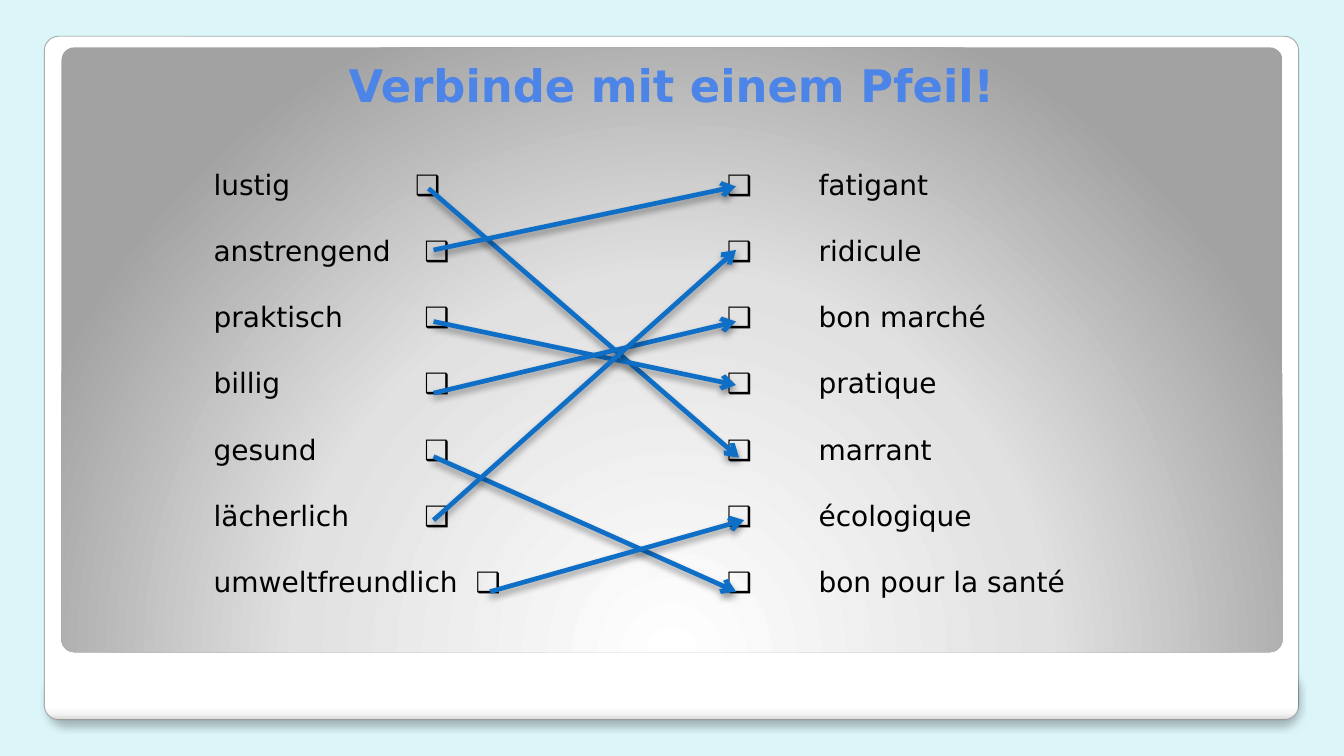
from dataclasses import dataclass
from typing import Optional

from lxml.etree import SubElement
from pptx import Presentation
from pptx.dml.color import RGBColor
from pptx.enum.shapes import MSO_CONNECTOR, MSO_SHAPE
from pptx.enum.text import MSO_ANCHOR
from pptx.oxml import parse_xml
from pptx.oxml.ns import nsdecls, qn
from pptx.util import Pt

EMU_PER_PX = 9144  # 100 px to the inch
FONT = "DejaVu Sans"
RIGHT_BOX_TAB, FRENCH_TAB = 509, 600
WHITE_SHEEN = ((0, "FFFFFF"), (98, "FFFFFF"), (99, "F7F7F7"), (100, "DADADA"))
GREY_GLOW = ((0, "FFFFFF"), (55, "E1E1E1"), (100, "A2A2A2"))
LINEAR_DOWN = '<a:lin ang="5400000" scaled="0"/>'
FROM_BOTTOM = ('<a:path path="circle"><a:fillToRect l="100000" t="350000" '
               'r="100000" b="100000"/></a:path>')


@dataclass(frozen=True)
class Shadow:
    opacity: int
    blur: float
    distance: float


@dataclass(frozen=True)
class Panel:
    box: tuple[int, int, int, int]
    rounding: float
    stops: tuple[tuple[int, str], ...]
    direction: str
    outlined: bool
    shadow: Optional[Shadow] = None


@dataclass(frozen=True)
class Row:
    german: str
    left_box_tab: int
    french: str


@dataclass(frozen=True)
class Arrow:
    start: tuple[int, int]
    end: tuple[int, int]


PANELS = (
    Panel((47, 663, 1240, 50), 0.333, WHITE_SHEEN, LINEAR_DOWN, True, Shadow(25, 6, 4)),
    Panel((44, 36, 1244, 678), 0.021, WHITE_SHEEN, LINEAR_DOWN, True),
    Panel((61, 47, 1211, 600), 0.021, GREY_GLOW, FROM_BOTTOM, False),
)
ROWS = (
    Row("lustig", 200, "fatigant"),
    Row("anstrengend", 209, "ridicule"),
    Row("praktisch", 209, "bon marché"),
    Row("billig", 209, "pratique"),
    Row("gesund", 209, "marrant"),
    Row("lächerlich", 209, "écologique"),
    Row("umweltfreundlich", 260, "bon pour la santé"),
)
ARROWS = (
    Arrow((425, 187), (733, 454)),
    Arrow((430, 248), (730, 185)),
    Arrow((430, 319), (730, 382)),
    Arrow((430, 390), (730, 319)),
    Arrow((430, 453), (730, 587)),
    Arrow((486, 587), (738, 516)),
    Arrow((430, 516), (730, 248)),
)
ARROW_SHADOW = Shadow(40, 5.2, 3)


def px(length: int) -> int:
    return length * EMU_PER_PX


def colour(value: str) -> RGBColor:
    return RGBColor.from_string(value)


def set_shadow(properties, shadow: Optional[Shadow]) -> None:
    effects = properties.find(qn("a:effectLst"))
    if effects is None:
        effects = SubElement(properties, qn("a:effectLst"))
    if shadow:
        effects.append(parse_xml(
            f'<a:outerShdw {nsdecls("a")} blurRad="{Pt(shadow.blur)}" '
            f'dist="{Pt(shadow.distance)}" dir="5400000" algn="ctr" rotWithShape="0">'
            f'<a:srgbClr val="000000"><a:alpha val="{shadow.opacity * 1000}"/>'
            '</a:srgbClr></a:outerShdw>'))


def add_panel(slide, panel: Panel) -> None:
    shape = slide.shapes.add_shape(MSO_SHAPE.ROUNDED_RECTANGLE, *map(px, panel.box))
    shape.adjustments[0] = panel.rounding
    properties = shape.element.spPr
    # Gradient fill
    shape.fill.solid()
    stops = "".join(f'<a:gs pos="{position * 1000}"><a:srgbClr val="{value}"/></a:gs>'
                    for position, value in panel.stops)
    properties.replace(properties.find(qn("a:solidFill")), parse_xml(
        f'<a:gradFill {nsdecls("a")} rotWithShape="1"><a:gsLst>{stops}</a:gsLst>'
        f'{panel.direction}</a:gradFill>'))
    # Faint outline
    if panel.outlined:
        shape.line.width = Pt(0.67)
        shape.line.color.rgb = colour("302F2C")
        line_colour = properties.find(f'{qn("a:ln")}/{qn("a:solidFill")}/{qn("a:srgbClr")}')
        SubElement(line_colour, qn("a:alpha"), val="37000")
    else:
        shape.line.fill.background()
    shape.shadow.inherit = False
    set_shadow(properties, panel.shadow)


def add_text_frame(slide, box: tuple[int, int, int, int], anchor: MSO_ANCHOR):
    frame = slide.shapes.add_textbox(*map(px, box)).text_frame
    frame.word_wrap = True
    frame.vertical_anchor = anchor
    return frame


def add_run(paragraph, text: str, size: int, value: str, bold: bool = False) -> None:
    run = paragraph.add_run()
    run.text = text
    run.font.name = FONT
    run.font.size = Pt(size)
    run.font.bold = bold
    run.font.color.rgb = colour(value)


def add_word_list(slide, rows: tuple[Row, ...]) -> None:
    frame = add_text_frame(slide, (202, 161, 937, 481), MSO_ANCHOR.TOP)
    for index, row in enumerate(rows):
        paragraph = frame.add_paragraph() if index else frame.paragraphs[0]
        paragraph.space_before = Pt(23.3 if index else 0)
        tabs = SubElement(paragraph._p.get_or_add_pPr(), qn("a:tabLst"))
        for position in (row.left_box_tab, RIGHT_BOX_TAB, FRENCH_TAB):
            SubElement(tabs, qn("a:tab"), pos=str(px(position)), algn="l")
        add_run(paragraph, f"{row.german}\t❑\t❑\t{row.french}", 20, "000000")


def add_arrow(slide, arrow: Arrow) -> None:
    connector = slide.shapes.add_connector(
        MSO_CONNECTOR.STRAIGHT, *map(px, arrow.start + arrow.end))
    connector.line.width = Pt(3.35)
    connector.line.color.rgb = colour("0F6FC6")
    properties = connector.element.spPr
    SubElement(properties.find(qn("a:ln")), qn("a:tailEnd"), type="arrow")
    set_shadow(properties, ARROW_SHADOW)


def main() -> None:
    presentation = Presentation()
    presentation.slide_width, presentation.slide_height = px(1333), px(750)
    slide = presentation.slides.add_slide(presentation.slide_layouts[6])

    # Background and framed panels
    slide.background.fill.solid()
    slide.background.fill.fore_color.rgb = colour("DBF5F9")
    for panel in PANELS:
        add_panel(slide, panel)

    # Title
    title = add_text_frame(slide, (336, 32, 895, 84), MSO_ANCHOR.BOTTOM)
    add_run(title.paragraphs[0], "Verbinde mit einem Pfeil!", 32, "4C84E8", bold=True)

    # Word pairs and their matches
    add_word_list(slide, ROWS)
    for arrow in ARROWS:
        add_arrow(slide, arrow)

    presentation.save("out.pptx")


if __name__ == "__main__":
    main()
